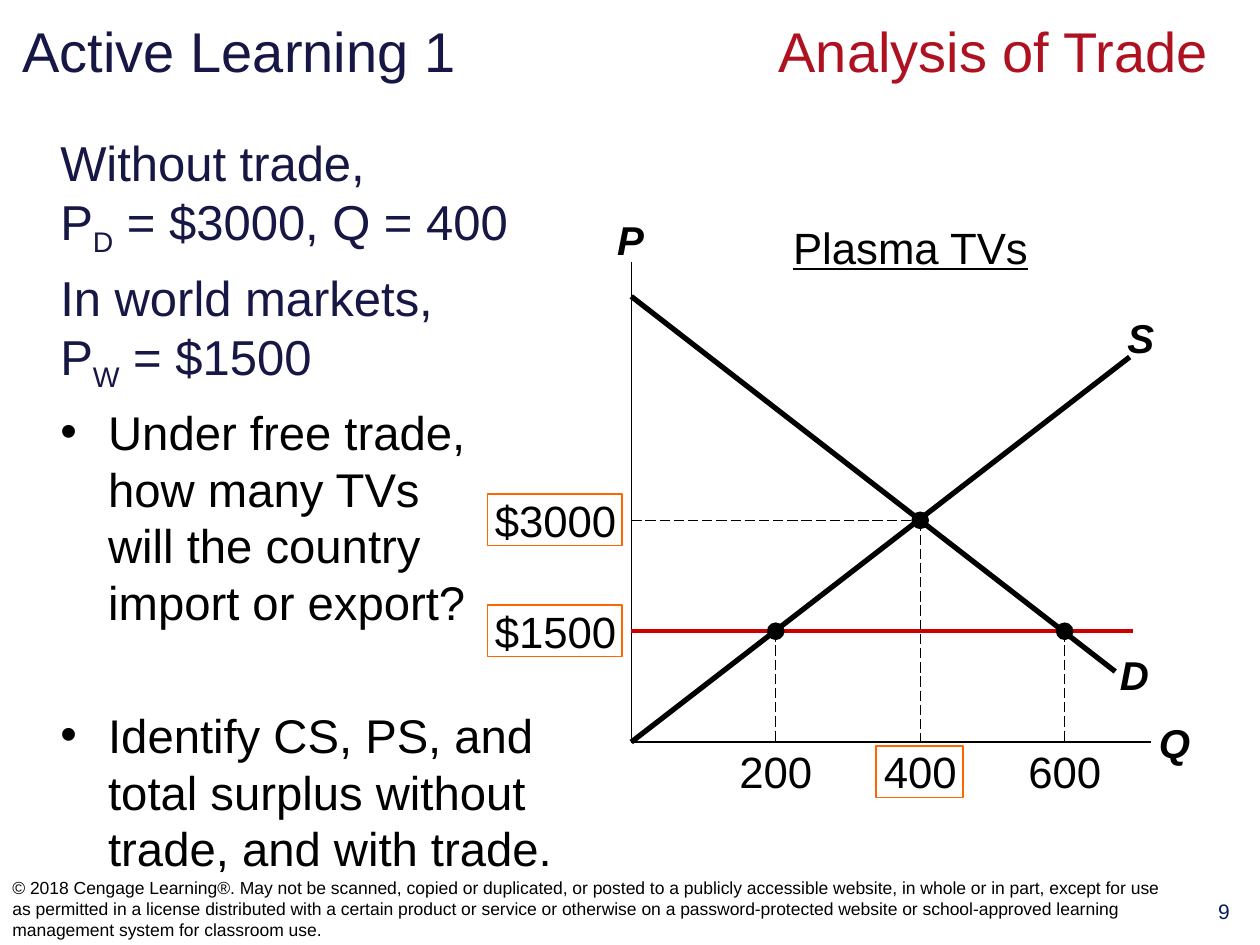
from dataclasses import dataclass
from lxml import etree
from pptx import Presentation, util as u
from pptx.dml.color import RGBColor
from pptx.enum import dml, shapes, text
from pptx.oxml.ns import qn


@dataclass(frozen=True)
class Theme:
    font: str = "Arial"
    navy: str = "171745"
    crimson: str = "AE1221"
    page: str = "002060"
    black: str = "000000"
    red: str = "CC0000"
    orange: str = "FF6600"
    title: float = 32
    lead: float = 28
    bullet: float = 27
    label: float = 25
    curve: float = 23
    number: float = 12
    legal: float = 10


T = Theme()
LEFT, CENTER, RIGHT = text.PP_ALIGN.LEFT, text.PP_ALIGN.CENTER, text.PP_ALIGN.RIGHT
TOP, MIDDLE = text.MSO_ANCHOR.TOP, text.MSO_ANCHOR.MIDDLE

# Content
TITLE = ("Active Learning 1 \t", "Analysis of Trade")
# (runs as (words, is subscript), bulleted, space before in points)
BODY = [
    ([("Without trade,\nP", False), ("D", True), (" = $3000, Q = 400", False)], False, 0),
    ([("In world markets, \nP", False), ("W", True), (" = $1500", False)], False, 5.6),
    ([("Under free trade, \nhow many TVs \nwill the country \nimport or export?", False)], True, 5.4),
    ([("Identify CS, PS, and total surplus without trade, and with trade.", False)], True, 43.5),
]
LEGAL = ("© 2018 Cengage Learning®. May not be scanned, copied or duplicated, or posted to a "
         "publicly accessible website, in whole or in part, except for use as permitted in a "
         "license distributed with a certain product or service or otherwise on a "
         "password-protected website or school-approved learning management system for "
         "classroom use.")

# Diagram in quantity and price: ((q, p), (q, p), colour, width, dashed)
LINES = [
    ((0, 0), (0, 6500), T.black, 0.75, False),
    ((0, 0), (720, 0), T.black, 0.75, False),
    ((0, 6030), (670, 955), T.black, 3, False),
    ((0, 0), (690, 5210), T.black, 3, False),
    ((0, 1500), (694, 1500), T.red, 2.25, False),
    ((200, 1500), (200, 0), T.black, 0.75, True),
    ((0, 3000), (400, 3000), T.black, 0.75, True),
    ((400, 3000), (400, 0), T.black, 0.75, True),
    ((600, 1500), (600, 0), T.black, 0.75, True),
]
POINTS = [(200, 1500), (400, 3000), (600, 1500)]
CURVE_NAMES = {"P": (5.0, 1.9), "Q": (9.3, 5.89), "D": (8.99, 5.35), "S": (9.05, 2.68)}
BOXED_QUANTITY = 400

# Grid
ORIGIN_X, ORIGIN_Y = 5.01, 5.89
PER_UNIT, PER_DOLLAR = 3.44 / 600, 0.88 / 1500
LABEL_H = 0.42
DOT = 0.14


def place(q, p):
    return ORIGIN_X + q * PER_UNIT, ORIGIN_Y - p * PER_DOLLAR


def inches(*values):
    return [u.Inches(v) for v in values]


def style(r, size, color, **flags):
    r.font.name, r.font.size = T.font, u.Pt(size)
    r.font.color.rgb = RGBColor.from_string(color)
    for name, value in flags.items():
        setattr(r.font, name, value)


def add_text(s, box, words, size, color=T.black, align=LEFT, anchor=TOP,
             insets=(0.1, 0.05, 0.1, 0.05), **flags):
    tf = s.shapes.add_textbox(*inches(*box)).text_frame
    tf.word_wrap, tf.vertical_anchor = True, anchor
    tf.margin_left, tf.margin_top, tf.margin_right, tf.margin_bottom = inches(*insets)
    p = tf.paragraphs[0]
    p.text, p.alignment = words, align
    for r in p.runs:
        style(r, size, color, **flags)
    return tf


def add_line(s, start, end, color, width, dashed):
    c = s.shapes.add_connector(shapes.MSO_CONNECTOR.STRAIGHT,
                               *inches(*place(*start), *place(*end)))
    c.line.color.rgb, c.line.width = RGBColor.from_string(color), u.Pt(width)
    if dashed:
        c.line.dash_style = dml.MSO_LINE.LONG_DASH
    etree.SubElement(c._element.spPr, qn("a:effectLst"))


def add_shape(s, kind, box, fill=None, line=None):
    sp = s.shapes.add_shape(kind, *inches(*box))
    sp.shadow.inherit = False
    if fill:
        sp.fill.solid()
        sp.fill.fore_color.rgb = RGBColor.from_string(fill)
    else:
        sp.fill.background()
    if line:
        sp.line.color.rgb, sp.line.width = RGBColor.from_string(line), u.Pt(1)
    else:
        sp.line.fill.background()


def add_title(s):
    sp = s.shapes.title
    sp.left, sp.top, sp.width, sp.height = inches(0.08, 0.04, 9.92, 0.72)
    tf = sp.text_frame
    tf.word_wrap, tf.vertical_anchor = False, MIDDLE
    tf.auto_size = text.MSO_AUTO_SIZE.NONE
    p = tf.paragraphs[0]
    p.alignment = LEFT
    tabs = etree.SubElement(p._p.get_or_add_pPr(), qn("a:tabLst"))
    etree.SubElement(tabs, qn("a:tab"), pos=str(u.Inches(6)), algn="l")
    for words, color in zip(TITLE, (T.navy, T.crimson)):
        r = p.add_run()
        r.text = words
        style(r, T.title, color)


def add_body(s):
    tf = add_text(s, (0.38, 1, 4.42, 6.05), "", T.lead)
    for i, (runs, bulleted, before) in enumerate(BODY):
        p = tf.add_paragraph() if i else tf.paragraphs[0]
        p.space_before = u.Pt(before)
        if bulleted:
            pPr = p._p.get_or_add_pPr()
            pPr.set("marL", str(u.Inches(0.38)))
            pPr.set("indent", str(u.Inches(-0.38)))
            etree.SubElement(pPr, qn("a:buFont"), typeface=T.font)
            etree.SubElement(pPr, qn("a:buChar"), char="•")
        for words, subscript in runs:
            for n, row in enumerate(words.split("\n")):
                if n:
                    p.add_line_break()
                r = p.add_run()
                r.text = row
                style(r, *((T.bullet, T.black) if bulleted else (T.lead, T.navy)))
                if subscript:
                    r.font._element.set("baseline", "-25000")


def add_diagram(s):
    for line in LINES:
        add_line(s, *line)
    for point in POINTS:
        x, y = place(*point)
        add_shape(s, shapes.MSO_SHAPE.OVAL, (x - DOT / 2, y - DOT / 2, DOT, DOT), fill=T.black)
    for name, (x, y) in CURVE_NAMES.items():
        add_text(s, (x - 0.2, y - 0.24, 0.4, 0.48), name, T.curve, align=CENTER,
                 anchor=MIDDLE, bold=True, italic=True)
    add_text(s, (6.18, 1.75, 2.09, LABEL_H), "Plasma TVs", T.label, align=CENTER,
             anchor=MIDDLE, insets=(0, 0, 0, 0), underline=True)
    frames = []
    for q, _ in POINTS:
        x = place(q, 0)[0]
        add_text(s, (x - 0.41, 5.91, 0.82, LABEL_H), str(q), T.label, align=CENTER,
                 anchor=MIDDLE, insets=(0.1, 0, 0.1, 0))
        if q == BOXED_QUANTITY:
            frames.append((x - 0.35, 5.92, 0.69, 0.41))
    for price in sorted({p for _, p in POINTS}):
        y = place(0, price)[1]
        add_text(s, (3.83, y - LABEL_H / 2, 1.16, LABEL_H), f"${price}", T.label,
                 align=RIGHT, anchor=MIDDLE, insets=(0, 0, 0.1, 0))
        frames.append((3.87, y - 0.21, 1.07, 0.41))
    for frame in frames:
        add_shape(s, shapes.MSO_SHAPE.RECTANGLE, frame, line=T.orange)


def main():
    prs = Presentation()
    prs.slide_width, prs.slide_height = inches(10, 7.5)
    s = prs.slides.add_slide(prs.slide_layouts[5])
    add_title(s)
    add_body(s)
    add_text(s, (9.43, 7.08, 0.57, 0.41), "9", T.number, T.page, CENTER)
    add_text(s, (0, 6.92, 9.41, 0.58), LEGAL, T.legal, anchor=MIDDLE)
    add_diagram(s)
    prs.save("out.pptx")


if __name__ == "__main__":
    main()
